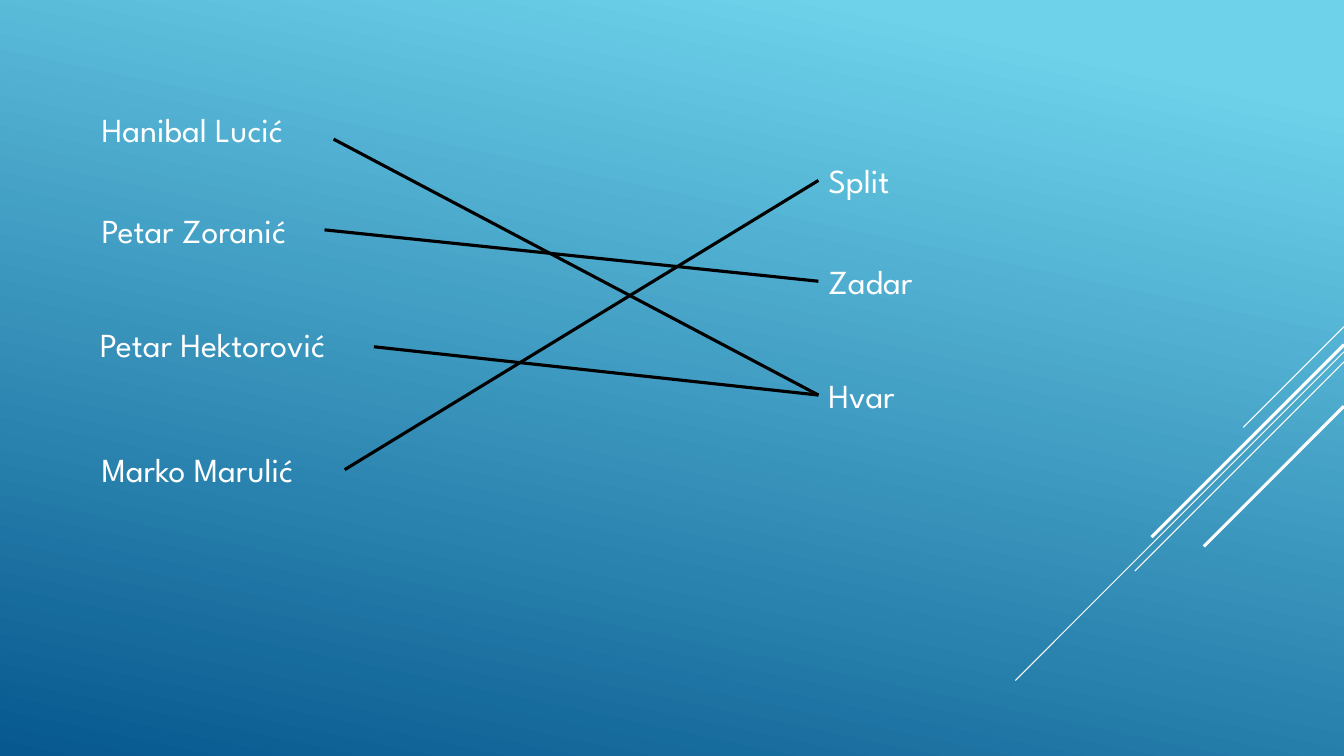
"""Build a matching slide that joins Croatian writers to their towns."""
from dataclasses import dataclass

from lxml.etree import SubElement
from pptx import Presentation
from pptx.dml.color import RGBColor
from pptx.enum.shapes import MSO_CONNECTOR
from pptx.enum.text import MSO_AUTO_SIZE
from pptx.oxml.ns import qn
from pptx.util import Pt


@dataclass(frozen=True)
class Theme:
    """Colours, font and sizes of the slide."""
    sky: RGBColor = RGBColor(0x6E, 0xD2, 0xEB)
    sea: RGBColor = RGBColor(0x06, 0x58, 0x8E)
    white: RGBColor = RGBColor(0xFF, 0xFF, 0xFF)
    black: RGBColor = RGBColor(0x00, 0x00, 0x00)
    font: str = "League Spartan"
    text_size: float = 24
    thin: float = 0.75
    thick: float = 2.25


THEME = Theme()
SLIDE_WIDTH, SLIDE_HEIGHT = 960, 540
LABEL_WIDTH, LABEL_HEIGHT = 255, 36
CITY_LEFT = 584.6

CITIES = {"Split": 110.9, "Zadar": 182.9, "Hvar": 264.2}
WRITERS = [
    ("Hanibal Lucić", 65.5, 74.2, (238.3, 99.4), "Hvar"),
    ("Petar Zoranić", 65.5, 146.2, (231.8, 164.2), "Zadar"),
    ("Petar Hektorović", 64.3, 227.5, (267.1, 247.7), "Hvar"),
    ("Marko Marulić", 65.5, 316.8, (246.2, 335.5), "Split"),
]
DIAGONALS = [
    (233.3, 72, THEME.thin),
    (251.3, 234.7, THEME.thin),
    (258.5, 149.4, THEME.thin),
    (246.2, 137.5, THEME.thick),
    (290.2, 100.1, THEME.thick),
]


def set_format(target, values):
    """Set each named attribute of the target."""
    for name, value in values.items():
        setattr(target, name, value)


def paint_background(page):
    """Fill the page with the sky-to-sea gradient."""
    fill = page.background.fill
    fill.gradient()
    fill.gradient_angle = 258
    stops = ((0.1, THEME.sky), (1.0, THEME.sea))
    for stop, (position, color) in zip(fill.gradient_stops, stops):
        stop.position = position
        stop.color.rgb = color


def add_line(page, start, end, color, width):
    """Draw a straight line without a shadow."""
    ends = [Pt(value) for value in (*start, *end)]
    line = page.shapes.add_connector(MSO_CONNECTOR.STRAIGHT, *ends)
    line.line.color.rgb = color
    line.line.width = Pt(width)
    SubElement(line._element.spPr, qn("a:effectLst"))


def add_label(page, text, left, top):
    """Place one line of white text."""
    frame = [Pt(value) for value in (left, top, LABEL_WIDTH, LABEL_HEIGHT)]
    box = page.shapes.add_textbox(*frame)
    set_format(box.text_frame, {"word_wrap": True, "auto_size": MSO_AUTO_SIZE.SHAPE_TO_FIT_TEXT})
    span = box.text_frame.paragraphs[0].add_run()
    span.text = text
    set_format(span.font, {"name": THEME.font, "size": Pt(THEME.text_size)})
    span.font.color.rgb = THEME.white


def main():
    """Build and save the deck."""
    deck = Presentation()
    set_format(deck, {"slide_width": Pt(SLIDE_WIDTH), "slide_height": Pt(SLIDE_HEIGHT)})
    page = deck.slides.add_slide(deck.slide_layouts.get_by_name("Blank"))
    paint_background(page)
    for top, reach, width in DIAGONALS:
        end = (SLIDE_WIDTH - reach, top + reach)
        add_line(page, (SLIDE_WIDTH, top), end, THEME.white, width)
    for writer, left, top, _, _ in WRITERS:
        add_label(page, writer, left, top)
    for city, top in CITIES.items():
        add_label(page, city, CITY_LEFT, top)
    for _, _, _, start, city in WRITERS:
        end = (CITY_LEFT, CITIES[city] + LABEL_HEIGHT / 2)
        add_line(page, start, end, THEME.black, THEME.thick)
    deck.save("out.pptx")


if __name__ == "__main__":
    main()
